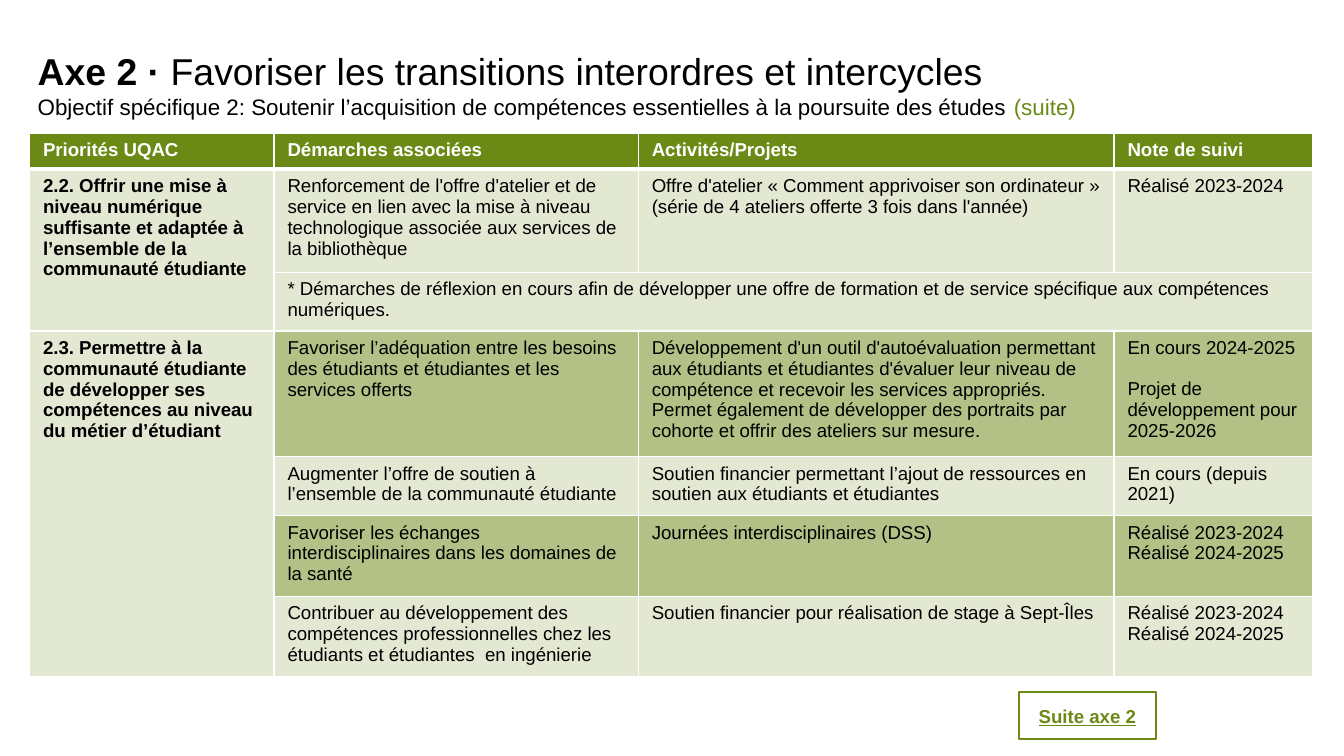
from lxml import etree
from pptx import Presentation
from pptx.dml.color import RGBColor
from pptx.enum import shapes, text
from pptx.oxml import ns
from pptx.util import Inches, Pt

GREEN = RGBColor(0x6B, 0x8A, 0x15)
LIGHT = RGBColor(0xE3, 0xE8, 0xD3)
MID = RGBColor(0xB3, 0xC1, 0x86)
WHITE = RGBColor(0xFF, 0xFF, 0xFF)
BLACK = RGBColor(0, 0, 0)

COLS = [1.82, 2.71, 3.54, 1.48]
ROWS = [0.25, 0.77, 0.43, 0.93, 0.44, 0.6, 0.59]
DONE = "Réalisé 2023-2024\nRéalisé 2024-2025"
CELLS = [
    ["Priorités UQAC", "Démarches associées", "Activités/Projets", "Note de suivi"],
    ["2.2. Offrir une mise à niveau numérique suffisante et adaptée à l’ensemble de la communauté étudiante",
     "Renforcement de l'offre d'atelier et de service en lien avec la mise à niveau technologique "
     "associée aux services de la bibliothèque",
     "Offre d'atelier « Comment apprivoiser son ordinateur » (série de 4 ateliers offerte 3 fois dans l'année)",
     "Réalisé 2023-2024"],
    ["", "* Démarches de réflexion en cours afin de développer une offre de formation et de service "
     "spécifique aux compétences numériques.", "", ""],
    ["2.3. Permettre à la communauté étudiante de développer ses compétences au niveau du métier d’étudiant",
     "Favoriser l’adéquation entre les besoins des étudiants et étudiantes et les services offerts",
     "Développement d'un outil d'autoévaluation permettant aux étudiants et étudiantes d'évaluer leur "
     "niveau de compétence et recevoir les services appropriés. Permet également de développer des "
     "portraits par cohorte et offrir des ateliers sur mesure.",
     "En cours 2024-2025\nProjet de développement pour 2025-2026"],
    ["", "Augmenter l’offre de soutien à l’ensemble de la communauté étudiante",
     "Soutien financier permettant l’ajout de ressources en soutien aux étudiants et étudiantes",
     "En cours (depuis 2021)"],
    ["", "Favoriser les échanges interdisciplinaires dans les domaines de la santé",
     "Journées interdisciplinaires (DSS)", DONE],
    ["", "Contribuer au développement des compétences professionnelles chez les étudiants et "
     "étudiantes  en ingénierie",
     "Soutien financier pour réalisation de stage à Sept-Îles", DONE],
]
SPANS = [(1, 0, 2, 0), (2, 1, 2, 3), (3, 0, 6, 0)]
HEAD = [
    [("Axe 2 · ", dict(size=Pt(20), bold=True)),
     ("Favoriser les transitions interordres et intercycles", dict(size=Pt(20)))],
    [("Objectif spécifique 2: Soutenir l’acquisition de compétences essentielles à la poursuite des études ",
      dict(size=Pt(12))),
     ("(suite)", dict(size=Pt(12), color=GREEN))],
]


class Deck:
    """Hold the text style and the current slide."""

    base = dict(name="Arial", size=Pt(10), bold=False, color=BLACK)

    def __init__(self, wide, high):
        """Open a deck with one title-only slide."""
        self.prs = Presentation()
        self.prs.slide_width, self.prs.slide_height = Inches(wide), Inches(high)
        self.slide = self.prs.slides.add_slide(self.prs.slide_layouts[5])

    def style(self, font, **look):
        """Apply the base format and its changes to a font."""
        for key, val in {**self.base, **look}.items():
            if key == "color":
                font.color.rgb = val
            else:
                setattr(font, key, val)

    def fill(self, frame, paras, align=text.PP_ALIGN.LEFT):
        """Write paragraphs made of formatted runs."""
        for i, runs in enumerate(paras):
            para = frame.paragraphs[0] if i == 0 else frame.add_paragraph()
            para.alignment = align
            for words, look in runs:
                run = para.add_run()
                run.text = words
                self.style(run.font, **look)

    def title(self, box, paras):
        """Place the title and write its lines."""
        shape = self.slide.shapes.title
        shape.left, shape.top, shape.width, shape.height = map(Inches, box)
        frame = shape.text_frame
        frame.word_wrap = True
        frame.vertical_anchor = text.MSO_ANCHOR.TOP
        frame.auto_size = text.MSO_AUTO_SIZE.SHAPE_TO_FIT_TEXT
        self.fill(frame, paras)

    def edges(self, cell, **sizes):
        """Draw white borders, given in points by side."""
        props = cell._tc.get_or_add_tcPr()
        for i, (side, size) in enumerate(sizes.items()):
            line = etree.Element(ns.qn(f"a:ln{side}"), w=str(Pt(size)))
            solid = etree.SubElement(line, ns.qn("a:solidFill"))
            etree.SubElement(solid, ns.qn("a:srgbClr"), val=str(WHITE))
            props.insert(i, line)

    def table(self, left, top, cols, rows, cells, spans):
        """Add the table with its bands, borders and merged cells."""
        size = map(Inches, (left, top, sum(cols), sum(rows)))
        grid = self.slide.shapes.add_table(len(rows), len(cols), *size).table
        for col, wide in zip(grid.columns, cols):
            col.width = Inches(wide)
        for row, high in zip(grid.rows, rows):
            row.height = Inches(high)
        for r, line in enumerate(cells):
            for c, words in enumerate(line):
                cell = grid.cell(r, c)
                cell.fill.solid()
                band = MID if c and r in (3, 5) else LIGHT
                cell.fill.fore_color.rgb = band if r else GREEN
                self.edges(cell, L=1, R=1, T=3 if r == 1 else 1, B=1 if r else 3)
                look = dict(bold=r == 0 or c == 0, color=BLACK if r else WHITE)
                if words:
                    self.fill(cell.text_frame, [[(part, look)] for part in words.split("\n")])
        for r, c, last, end in spans:
            grid.cell(r, c).merge(grid.cell(last, end))
        return grid

    def button(self, box, words):
        """Add an outlined button."""
        shape = self.slide.shapes.add_shape(shapes.MSO_SHAPE.RECTANGLE, *map(Inches, box))
        shape.shadow.inherit = False
        shape.fill.solid()
        shape.fill.fore_color.rgb = WHITE
        shape.line.color.rgb = GREEN
        shape.line.width = Pt(1)
        frame = shape.text_frame
        frame.word_wrap = True
        frame.vertical_anchor = text.MSO_ANCHOR.MIDDLE
        look = dict(bold=True, underline=True, color=GREEN)
        self.fill(frame, [[(words, look)]], text.PP_ALIGN.CENTER)


def main():
    """Build and save the slide."""
    deck = Deck(10, 10 * 9 / 16)
    deck.title((0.18, 0.31, 9.6, 0.64), HEAD)
    grid = deck.table(0.22, 0.99, COLS, ROWS, CELLS, SPANS)
    grid.cell(3, 3).text_frame.paragraphs[1].space_before = Pt(11)
    deck.button((7.58, 5.15, 1.02, 0.35), "Suite axe 2")
    deck.prs.save("out.pptx")


if __name__ == "__main__":
    main()
